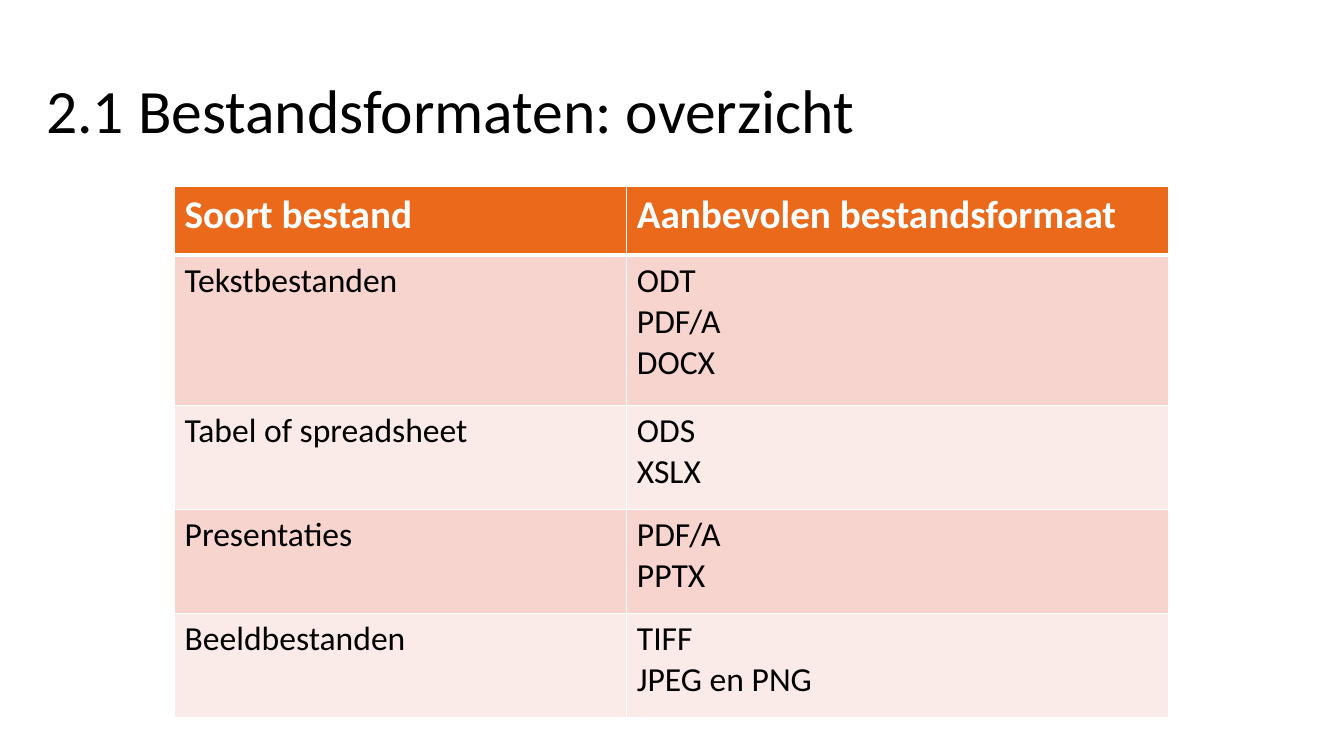
import pptx
import pptx.util
import pptx.dml.color
import pptx.enum.text
from dataclasses import dataclass
from lxml import etree
from pptx.util import Cm, Pt


def rgb(code):
    return pptx.dml.color.RGBColor.from_string(code)


@dataclass(frozen=True)
class Theme:
    font: str = "Calibri"
    ink: str = "000000"
    paper: str = "FFFFFF"
    header_fill: str = "EB691B"
    band_fills: tuple = ("F7D4CD", "FBEBE8")
    title_size: int = 44
    header_size: int = 28
    body_size: int = 24
    thin_line: int = 1
    header_line: int = 3


THEME = Theme()
HEADINGS = ("Soort bestand", ("Aanbevolen bestandsformaat",))
FORMATS = (
    ("Tekstbestanden", ("ODT", "PDF/A", "DOCX")),
    ("Tabel of spreadsheet", ("ODS", "XSLX")),
    ("Presentaties", ("PDF/A", "PPTX")),
    ("Beeldbestanden", ("TIFF", "JPEG en PNG")),
)


def style_font(paragraph, size, color, bold=False):
    paragraph.font.name = THEME.font
    paragraph.font.size = Pt(size)
    paragraph.font.bold = bold
    paragraph.font.color.rgb = rgb(color)


def add_title(slide, text, left, top, width, height):
    title = slide.shapes.title
    title.left, title.top, title.width, title.height = left, top, width, height
    frame = title.text_frame
    frame.text = text
    frame.auto_size = pptx.enum.text.MSO_AUTO_SIZE.NONE
    frame.vertical_anchor = pptx.enum.text.MSO_ANCHOR.MIDDLE
    heading = frame.paragraphs[0]
    heading.alignment = pptx.enum.text.PP_ALIGN.LEFT
    heading.line_spacing = 0.9
    style_font(heading, THEME.title_size, THEME.ink)


def set_borders(cell, top, bottom):
    """Draw the cell's edges; call before filling, as the schema puts lines first."""
    properties = cell._tc.get_or_add_tcPr()
    thin = THEME.thin_line
    for side, points in (("L", thin), ("R", thin), ("T", top), ("B", bottom)):
        line = etree.SubElement(
            properties, pptx.oxml.ns.qn(f"a:ln{side}"), w=str(Pt(points)))
        fill = etree.SubElement(line, pptx.oxml.ns.qn("a:solidFill"))
        etree.SubElement(fill, pptx.oxml.ns.qn("a:srgbClr"), val=THEME.paper)


def add_format_table(slide, left, top, width, height):
    """Share the height by line count: a header row, then one row per file kind."""
    records = (HEADINGS, *FORMATS)
    table = slide.shapes.add_table(
        len(records), 2, left, top, width, height).table
    table.columns[0].width = int(width * 0.455)
    table.columns[1].width = width - table.columns[0].width
    header_height, line_height, padding = Cm(1.73), Cm(1.16), Cm(0.3)
    for row_number, (kind, formats) in enumerate(records):
        is_header = row_number == 0
        table.rows[row_number].height = (
            header_height if is_header else line_height * len(formats) + padding)
        fill = (THEME.header_fill if is_header
                else THEME.band_fills[(row_number - 1) % 2])
        for column, text in enumerate((kind, "\n".join(formats))):
            cell = table.cell(row_number, column)
            set_borders(
                cell,
                THEME.header_line if row_number == 1 else THEME.thin_line,
                THEME.header_line if is_header else THEME.thin_line)
            cell.fill.solid()
            cell.fill.fore_color.rgb = rgb(fill)
            cell.text = text
            for paragraph in cell.text_frame.paragraphs:
                style_font(
                    paragraph,
                    THEME.header_size if is_header else THEME.body_size,
                    THEME.paper if is_header else THEME.ink,
                    bold=is_header)


def main():
    presentation = pptx.Presentation()
    presentation.slide_width, presentation.slide_height = Cm(33.87), Cm(19.05)
    slide = presentation.slides.add_slide(presentation.slide_layouts[5])
    add_title(slide, "2.1 Bestandsformaten: overzicht",
              Cm(0.91), Cm(1.02), Cm(30.61), Cm(3.68))
    add_format_table(slide, Cm(4.4), Cm(4.7), Cm(25.05), Cm(13.35))
    presentation.save("out.pptx")


if __name__ == "__main__":
    main()
